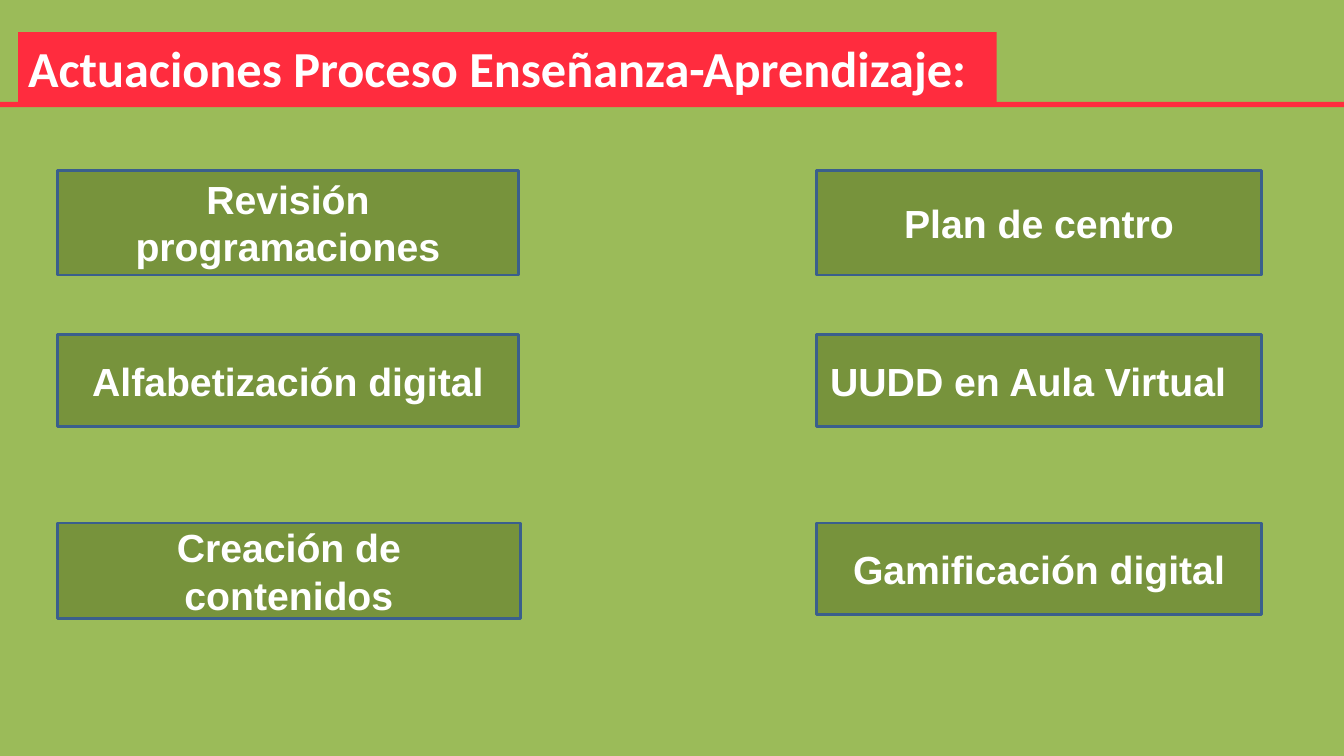
from dataclasses import dataclass

from pptx import Presentation
from pptx.dml.color import RGBColor as RGB
from pptx.enum.shapes import MSO_SHAPE as SHAPE
from pptx.enum.text import MSO_ANCHOR as ANCHOR, PP_ALIGN as ALIGN
from pptx.util import Cm, Pt


@dataclass(frozen=True)
class Theme:
    background: RGB = RGB(0x9B, 0xBB, 0x59)
    accent: RGB = RGB(0xFF, 0x2C, 0x3E)
    card: RGB = RGB(0x77, 0x93, 0x3C)
    border: RGB = RGB(0x3A, 0x5F, 0x8C)
    text: RGB = RGB(0xFF, 0xFF, 0xFF)
    title_font: str = "Calibri"
    card_font: str = "Arial"
    title_size: int = 36
    card_size: int = 28
    border_width: int = 2


THEME = Theme()
WIDTH, HEIGHT = 33.87, 19.05

COLUMNS = [(0, 11.61), (19.12, 11.23)]
ROWS = [(0, 2.64), (4.14, 2.31), (8.89, 2.31)]
ACTIONS = [
    ["Revisión programaciones", "Plan de centro"],
    ["Alfabetización digital", "UUDD en Aula Virtual"],
    ["Creación de contenidos", "Gamificación digital"],
]
SIZES = {"Creación de contenidos": (11.66, 2.41)}
RIGHT_INSETS = {"UUDD en Aula Virtual": 0.8}


def add_rect(s, x, y, w, h, fill, line=None):
    sp = s.shapes.add_shape(SHAPE.RECTANGLE, Cm(x), Cm(y), Cm(w), Cm(h))
    sp.shadow.inherit = False
    sp.fill.solid()
    sp.fill.fore_color.rgb = fill
    if line is None:
        sp.line.fill.background()
    else:
        sp.line.color.rgb = line
        sp.line.width = Pt(THEME.border_width)
    return sp


def write_text(sp, text, font, size, align=ALIGN.CENTER, anchor=ANCHOR.MIDDLE,
               right_inset=0.25):
    tf = sp.text_frame
    tf.word_wrap = True
    tf.vertical_anchor = anchor
    tf.margin_right = Cm(right_inset)
    p = tf.paragraphs[0]
    p.alignment = align
    r = p.add_run()
    r.text = text
    r.font.name = font
    r.font.size = Pt(size)
    r.font.bold = True
    r.font.color.rgb = THEME.text


def add_header(s, x, y, w, h):
    add_rect(s, x, y + 1.76, w, 0.13, THEME.accent)
    title = add_rect(s, x + 0.46, y, 24.66, h, THEME.accent)
    write_text(title, "Actuaciones Proceso Enseñanza-Aprendizaje:",
               THEME.title_font, THEME.title_size,
               align=ALIGN.LEFT, anchor=ANCHOR.TOP)


def add_actions(s, x, y):
    for (dy, h), row in zip(ROWS, ACTIONS):
        for (dx, w), text in zip(COLUMNS, row):
            card_w, card_h = SIZES.get(text, (w, h))
            card = add_rect(s, x + dx, y + dy, card_w, card_h,
                            THEME.card, THEME.border)
            write_text(card, text, THEME.card_font, THEME.card_size,
                       right_inset=RIGHT_INSETS.get(text, 0.25))


def main():
    prs = Presentation()
    prs.slide_width, prs.slide_height = Cm(WIDTH), Cm(HEIGHT)
    s = prs.slides.add_slide(prs.slide_layouts[6])
    s.background.fill.solid()
    s.background.fill.fore_color.rgb = THEME.background
    add_header(s, 0, 0.81, WIDTH, 1.85)
    add_actions(s, 1.45, 4.29)
    prs.save("out.pptx")


if __name__ == "__main__":
    main()
